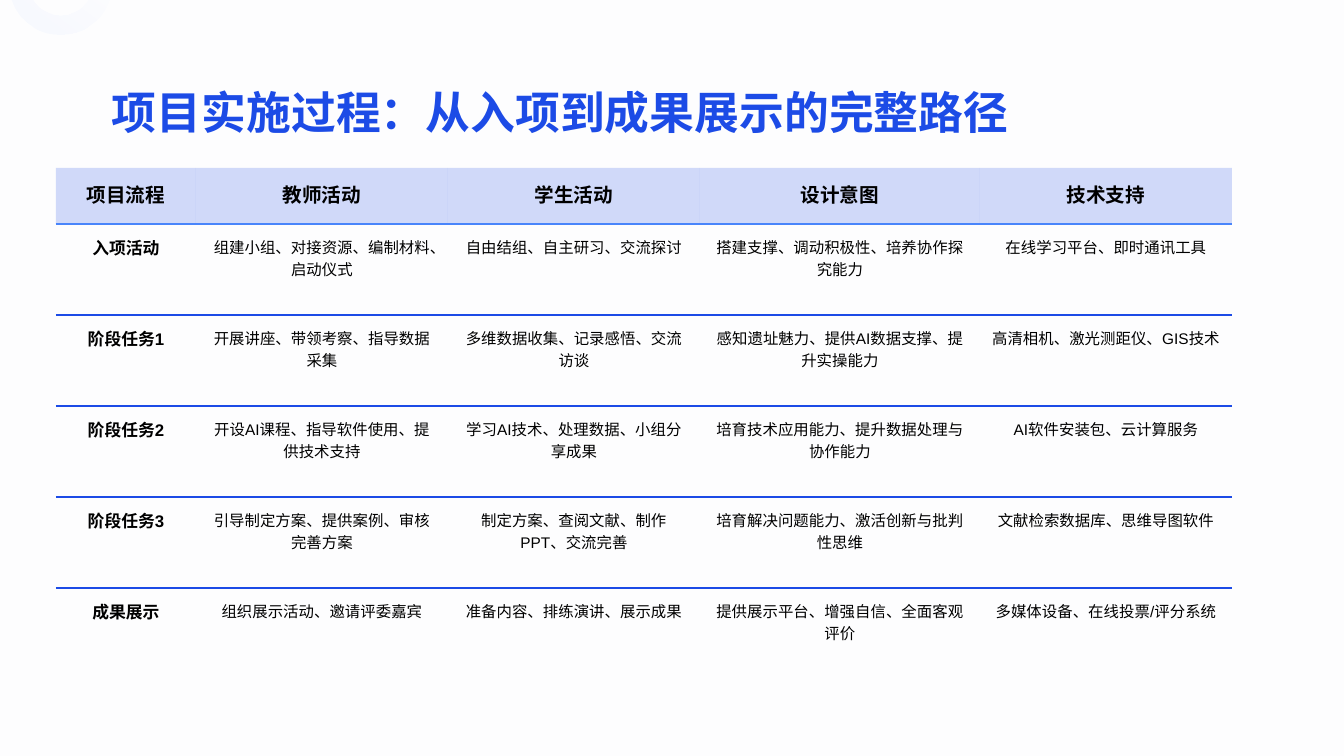
import math
from dataclasses import dataclass

from lxml import etree
from pptx import Presentation
from pptx import util as u
from pptx.dml.color import RGBColor
from pptx.enum import shapes, text
from pptx.oxml.ns import qn

PX = 12700  # EMU per px


@dataclass(frozen=True)
class Theme:
    font: str = "Arial"
    blue: str = "1C4BE6"
    sky: str = "4985FB"
    mist: str = "D2DBFA"
    white: str = "FFFFFF"
    black: str = "000000"
    title_size: int = 32
    header_size: int = 14
    stage_size: int = 12
    body_size: int = 11


@dataclass(frozen=True)
class Veil:
    """A see-through layer over the whole slide."""
    kind: shapes.MSO_SHAPE
    color: str
    opacity: int


@dataclass(frozen=True)
class Border:
    color: str
    points: int


@dataclass(frozen=True)
class Ring:
    x: int
    y: int
    outer: int
    inner: int


THEME = Theme()
WIDTH, HEIGHT = 960, 540
VEILS = [
    Veil(shapes.MSO_SHAPE.RECTANGLE, THEME.mist, 20),
    Veil(shapes.MSO_SHAPE.ROUNDED_RECTANGLE, THEME.white, 85),
]
RING = Ring(43, -12, 37, 23)
HEADER_LINE = Border(THEME.sky, 2)
ROW_LINE = Border(THEME.blue, 1)
COLUMN_WIDTHS = [100, 180, 180, 200, 180]
HEADER_HEIGHT, ROW_HEIGHT, CELL_INSET = 40, 65, 8
TITLE = "项目实施过程：从入项到成果展示的完整路径"
ROWS = [
    ["项目流程", "教师活动", "学生活动", "设计意图", "技术支持"],
    ["入项活动", "组建小组、对接资源、编制材料、启动仪式", "自由结组、自主研习、交流探讨",
     "搭建支撑、调动积极性、培养协作探究能力", "在线学习平台、即时通讯工具"],
    ["阶段任务1", "开展讲座、带领考察、指导数据采集", "多维数据收集、记录感悟、交流访谈",
     "感知遗址魅力、提供AI数据支撑、提升实操能力", "高清相机、激光测距仪、GIS技术"],
    ["阶段任务2", "开设AI课程、指导软件使用、提供技术支持", "学习AI技术、处理数据、小组分享成果",
     "培育技术应用能力、提升数据处理与协作能力", "AI软件安装包、云计算服务"],
    ["阶段任务3", "引导制定方案、提供案例、审核完善方案", "制定方案、查阅文献、制作PPT、交流完善",
     "培育解决问题能力、激活创新与批判性思维", "文献检索数据库、思维导图软件"],
    ["成果展示", "组织展示活动、邀请评委嘉宾", "准备内容、排练演讲、展示成果",
     "提供展示平台、增强自信、全面客观评价", "多媒体设备、在线投票/评分系统"],
]


def px(length: float) -> u.Emu:
    return u.Emu(round(length * PX))


def set_opacity(element, *percents: int) -> None:
    """Give each RGB colour inside the element its opacity, in order."""
    for color, percent in zip(list(element.iter(qn("a:srgbClr"))), percents):
        etree.SubElement(color, qn("a:alpha"), val=str(percent * 1000))


def style_text(para, size: int, color: str, bold: bool) -> None:
    for span in para.runs:
        span.font.name = THEME.font
        span.font.size = u.Pt(size)
        span.font.bold = bold
        span.font.color.rgb = RGBColor.from_string(color)


def draw_veil(page, veil: Veil) -> None:
    box = page.shapes.add_shape(veil.kind, 0, 0, px(WIDTH), px(HEIGHT))
    if len(box.adjustments):
        box.adjustments[0] = 0
    box.shadow.inherit = False
    box.line.fill.background()
    box.fill.solid()
    box.fill.fore_color.rgb = RGBColor.from_string(veil.color)
    set_opacity(box.element.spPr, veil.opacity)


def arc_points(ring: Ring, radius: int, steps: int = 32) -> list[tuple[int, int]]:
    """Points from right to left on the part of the circle below the slide's top edge."""
    start = math.asin(-ring.y / radius)
    sweep = math.pi - 2 * start
    angles = [start + sweep * step / steps for step in range(steps + 1)]
    return [(px(ring.x + radius * math.cos(a)), px(ring.y + radius * math.sin(a)))
            for a in angles]


def draw_ring(page, ring: Ring) -> None:
    points = arc_points(ring, ring.inner) + arc_points(ring, ring.outer)[::-1]
    builder = page.shapes.build_freeform(*points[0], scale=1.0)
    builder.add_line_segments(points[1:], close=True)
    shape = builder.convert_to_shape()
    shape.shadow.inherit = False
    shape.line.fill.background()
    shape.fill.gradient()
    shape.fill.gradient_angle = 234
    for stop, color in zip(shape.fill.gradient_stops, (THEME.blue, THEME.sky)):
        stop.color.rgb = RGBColor.from_string(color)
    set_opacity(shape.element.spPr, 5, 30)


def place_title(page) -> None:
    title = page.shapes.title
    title.element.getparent().append(title.element)  # in front of the veils
    title.left, title.top, title.width, title.height = px(80), px(50), px(800), px(50)
    frame = title.text_frame
    frame.text = TITLE
    frame.word_wrap = True
    frame.auto_size = text.MSO_AUTO_SIZE.NONE
    frame.vertical_anchor = text.MSO_ANCHOR.MIDDLE
    frame.margin_left = frame.margin_right = frame.margin_top = frame.margin_bottom = 0
    para = frame.paragraphs[0]
    para.alignment = text.PP_ALIGN.LEFT
    para.line_spacing = 1.25
    style_text(para, THEME.title_size, THEME.blue, True)


def set_borders(cell, top: Border | None, bottom: Border | None) -> None:
    properties = cell._tc.get_or_add_tcPr()
    sides = {"a:lnL": None, "a:lnR": None, "a:lnT": top, "a:lnB": bottom}
    for index, (tag, border) in enumerate(sides.items()):
        line = etree.Element(qn(tag))
        properties.insert(index, line)
        if border is None:
            etree.SubElement(line, qn("a:noFill"))
        else:
            line.set("w", str(u.Pt(border.points)))
            fill = etree.SubElement(line, qn("a:solidFill"))
            etree.SubElement(fill, qn("a:srgbClr"), val=border.color)


def fill_cell(cell, words: str, size: int, bold: bool, color: str, opacity: int) -> None:
    cell.margin_left = cell.margin_right = px(CELL_INSET)
    cell.margin_top = cell.margin_bottom = px(CELL_INSET)
    cell.text_frame.text = words
    para = cell.text_frame.paragraphs[0]
    para.alignment = text.PP_ALIGN.CENTER
    style_text(para, size, THEME.black, bold)
    cell.fill.solid()
    cell.fill.fore_color.rgb = RGBColor.from_string(color)
    set_opacity(cell._tc.get_or_add_tcPr(), opacity)


def draw_process_table(page) -> None:
    heights = [HEADER_HEIGHT] + [ROW_HEIGHT] * (len(ROWS) - 1)
    table = page.shapes.add_table(
        len(ROWS), len(COLUMN_WIDTHS), px(40), px(120),
        px(sum(COLUMN_WIDTHS)), px(sum(heights))).table
    table.first_row = table.horz_banding = False
    for column, width in zip(table.columns, COLUMN_WIDTHS):
        column.width = px(width)
    lines = [None, HEADER_LINE] + [ROW_LINE] * (len(ROWS) - 2) + [None]
    for r, words_in_row in enumerate(ROWS):
        table.rows[r].height = px(heights[r])
        color, opacity = (THEME.blue, 20) if r == 0 else (THEME.white, 5)
        for c, words in enumerate(words_in_row):
            size = (THEME.header_size if r == 0
                    else THEME.stage_size if c == 0 else THEME.body_size)
            cell = table.cell(r, c)
            fill_cell(cell, words, size, r == 0 or c == 0, color, opacity)
            set_borders(cell, lines[r], lines[r + 1])


def main() -> None:
    deck = Presentation()
    deck.slide_width, deck.slide_height = px(WIDTH), px(HEIGHT)
    page = deck.slides.add_slide(deck.slide_layouts.get_by_name("Title Only"))
    backdrop, cover = VEILS
    draw_veil(page, backdrop)
    draw_ring(page, RING)
    draw_veil(page, cover)
    place_title(page)
    draw_process_table(page)
    deck.save("out.pptx")


if __name__ == "__main__":
    main()
